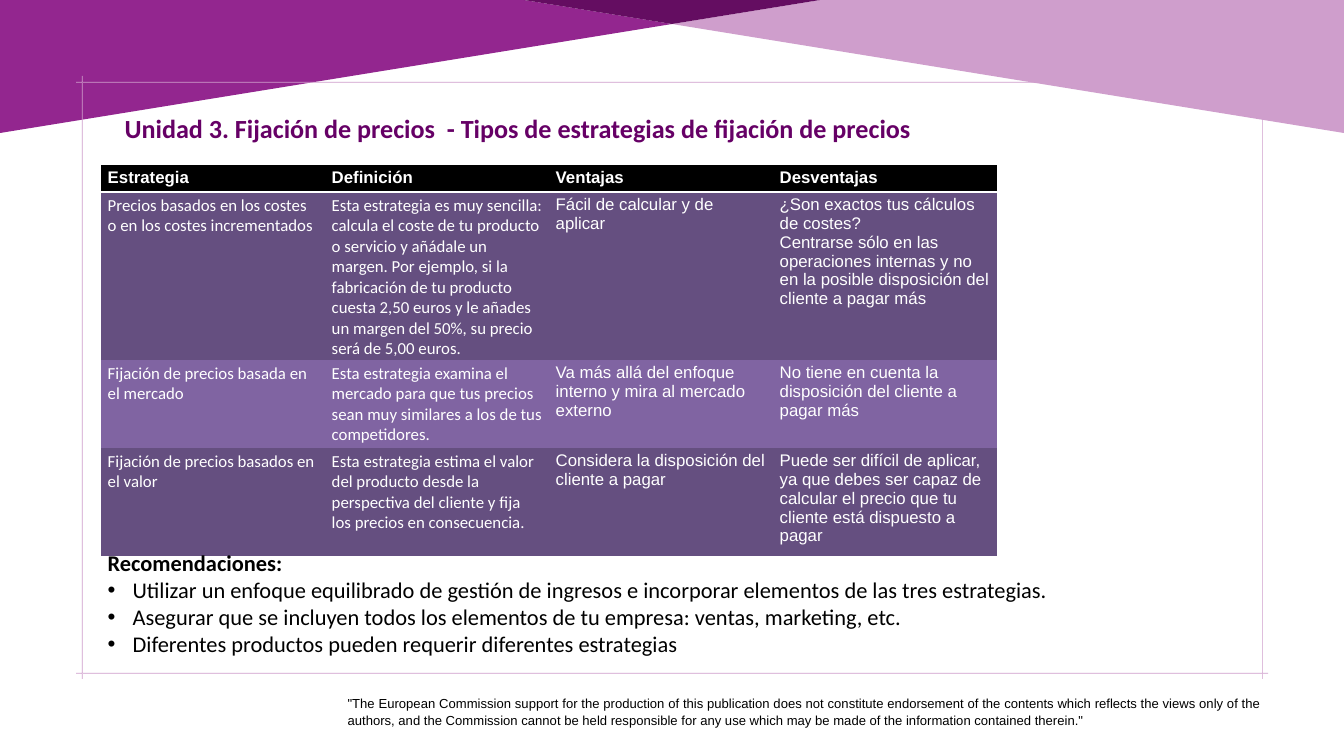
"""Build the slide on pricing strategies."""
from lxml.etree import SubElement
from pptx import Presentation
from pptx.dml.color import RGBColor
from pptx.enum.text import MSO_AUTO_SIZE, PP_ALIGN as Align
from pptx.oxml import parse_xml
from pptx.oxml.ns import nsdecls, qn
from pptx.util import Pt

WHITE = RGBColor(0xFF, 0xFF, 0xFF)
BLACK = RGBColor(0, 0, 0)
PURPLE = RGBColor(0x93, 0x26, 0x8F)
PINK = RGBColor(0xCF, 0x9E, 0xCC)
PLUM = RGBColor(0x64, 0x0D, 0x61)
TITLE = RGBColor(0x66, 0x00, 0x66)
BAND_DARK = RGBColor(0x65, 0x4F, 0x80)
BAND_LIGHT = RGBColor(0x80, 0x64, 0xA2)
NO_STYLE = "{2D5ABB26-0587-4C30-8999-92F81FD0307C}"

HEADING = "Unidad 3. Fijación de precios  - Tipos de estrategias de fijación de precios"
HEADERS = ["Estrategia", "Definición", "Ventajas", "Desventajas"]
STRATEGIES = [
    ["Precios basados en los costes o en los costes incrementados",
     "Esta estrategia es muy sencilla: calcula el coste de tu producto o servicio y "
     "añádale un margen. Por ejemplo, si la fabricación de tu producto cuesta 2,50 euros "
     "y le añades un margen del 50%, su precio será de 5,00 euros.",
     "Fácil de calcular y de aplicar",
     "¿Son exactos tus cálculos de costes?\n"
     "Centrarse sólo en las operaciones internas y no en la posible disposición del "
     "cliente a pagar más"],
    ["Fijación de precios basada en el mercado",
     "Esta estrategia examina el mercado para que tus precios sean muy similares a los "
     "de tus competidores.",
     "Va más allá del enfoque interno y mira al mercado externo",
     "No tiene en cuenta la disposición del cliente a pagar más"],
    ["Fijación de precios basados en el valor",
     "Esta estrategia estima el valor del producto desde la perspectiva del cliente y "
     "fija los precios en consecuencia.",
     "Considera la disposición del cliente a pagar",
     "Puede ser difícil de aplicar, ya que debes ser capaz de calcular el precio que tu "
     "cliente está dispuesto a pagar"],
]
ROW_HEIGHTS = [27, 168, 88, 107]
COLUMN_WIDTH = 224
COLUMN_FONTS = ["Calibri", "Calibri", "Arial", "Arial"]
ADVICE_HEADING = "Recomendaciones:"
ADVICE = [
    "Utilizar un enfoque equilibrado de gestión de ingresos e incorporar elementos de las "
    "tres estrategias.",
    "Asegurar que se incluyen todos los elementos de tu empresa: ventas, marketing, etc.",
    "Diferentes productos pueden requerir diferentes estrategias",
]
DISCLAIMER = (
    '"The European Commission support for the production of this publication does not '
    "constitute endorsement of the contents which reflects the views only of the authors, "
    "and the Commission cannot be held responsible for any use which may be made of the "
    'information contained therein."')

LEFT_BANNER = [(0, 133), (0, 0), (524, 0), (672, 24)]
RIGHT_BANNER = [(1344, 133), (672, 24), (820, 0), (1344, 0)]
OVERLAP = [(672, 24), (524, 0), (820, 0)]
FRAME_X, FRAME_Y, OVERHANG, THIN = (82, 1262), (82, 673), 6, 0.6


def px(n):
    return round(n * 914400 / 67.2)


def bar(x, y, w, h):
    return [(x, y), (x + w, y), (x + w, y + h), (x, y + h)]


def add_outline(slide, contours, color):
    builder = None
    for contour in contours:
        start, *rest = [(px(x), px(y)) for x, y in contour]
        if builder is None:
            builder = slide.shapes.build_freeform(*start)
        else:
            builder.move_to(*start)
        builder.add_line_segments(rest, close=True)
    s = builder.convert_to_shape()
    s.shadow.inherit = False
    s.fill.solid()
    s.fill.fore_color.rgb = color
    s.line.fill.background()


def add_run(p, text, size, font, color, bold=False):
    r = p.add_run()
    r.text = text
    r.font.size, r.font.name, r.font.bold = Pt(size), font, bold
    r.font.color.rgb = color


def add_text_box(slide, x, y, w, h):
    tf = slide.shapes.add_textbox(px(x), px(y), px(w), px(h)).text_frame
    tf.word_wrap = True
    tf.auto_size = MSO_AUTO_SIZE.SHAPE_TO_FIT_TEXT
    return tf


def add_bullet(p, indent):
    pPr = p._p.get_or_add_pPr()
    pPr.set("marL", str(px(indent)))
    pPr.set("indent", str(-px(indent)))
    SubElement(pPr, qn("a:buFont")).set("typeface", "Arial")
    SubElement(pPr, qn("a:buChar")).set("char", "•")


def underline_cell(cell):
    cell._tc.get_or_add_tcPr().insert(0, parse_xml(
        f'<a:lnB {nsdecls("a")} w="25400"><a:solidFill><a:srgbClr val="{WHITE}"/>'
        "</a:solidFill></a:lnB>"))


def add_strategy_table(slide, x, y):
    rows = [HEADERS] + STRATEGIES
    table = slide.shapes.add_table(len(rows), len(HEADERS), px(x), px(y),
                                   px(COLUMN_WIDTH * len(HEADERS)),
                                   px(sum(ROW_HEIGHTS))).table
    table._tbl.tblPr.find(qn("a:tableStyleId")).text = NO_STYLE
    for column in table.columns:
        column.width = px(COLUMN_WIDTH)
    for i, (texts, height) in enumerate(zip(rows, ROW_HEIGHTS)):
        header = i == 0
        table.rows[i].height = px(height)
        for j, text in enumerate(texts):
            cell = table.cell(i, j)
            cell.fill.solid()
            cell.fill.fore_color.rgb = BLACK if header else BAND_DARK if i % 2 else BAND_LIGHT
            if header:
                underline_cell(cell)
            tf = cell.text_frame
            for k, line in enumerate(text.split("\n")):
                p = tf.add_paragraph() if k else tf.paragraphs[0]
                add_run(p, line, 18, "Arial" if header else COLUMN_FONTS[j], WHITE, header)


def main():
    prs = Presentation()
    prs.slide_width, prs.slide_height = px(1344), px(756)
    slide = prs.slides.add_slide(prs.slide_layouts[6])

    (left, right), (top, bottom) = FRAME_X, FRAME_Y
    wide, tall = right - left + 2 * OVERHANG, bottom - top + 2 * OVERHANG
    frame = [bar(left - OVERHANG, y, wide, THIN) for y in FRAME_Y]
    frame += [bar(x, top - OVERHANG, THIN, tall) for x in FRAME_X]
    for contours, color in [([LEFT_BANNER], PURPLE), (frame, PINK),
                            ([RIGHT_BANNER], PINK), ([OVERLAP], PLUM)]:
        add_outline(slide, contours, color)

    p = add_text_box(slide, 341, 691, 927, 35).paragraphs[0]
    p.alignment, p.line_spacing = Align.JUSTIFY, 1.07
    add_run(p, DISCLAIMER, 14, "Arial", BLACK)

    p = add_text_box(slide, 118, 109, 1070, 38).paragraphs[0]
    add_run(p, HEADING, 28, "Calibri", TITLE, True)

    add_strategy_table(slide, 101, 165)

    tf = add_text_box(slide, 101, 546, 1070, 116)
    add_run(tf.paragraphs[0], ADVICE_HEADING, 24, "Calibri", BLACK, True)
    for text in ADVICE:
        p = tf.add_paragraph()
        add_bullet(p, 25)
        add_run(p, text, 24, "Calibri", BLACK)

    prs.save("out.pptx")


if __name__ == "__main__":
    main()
